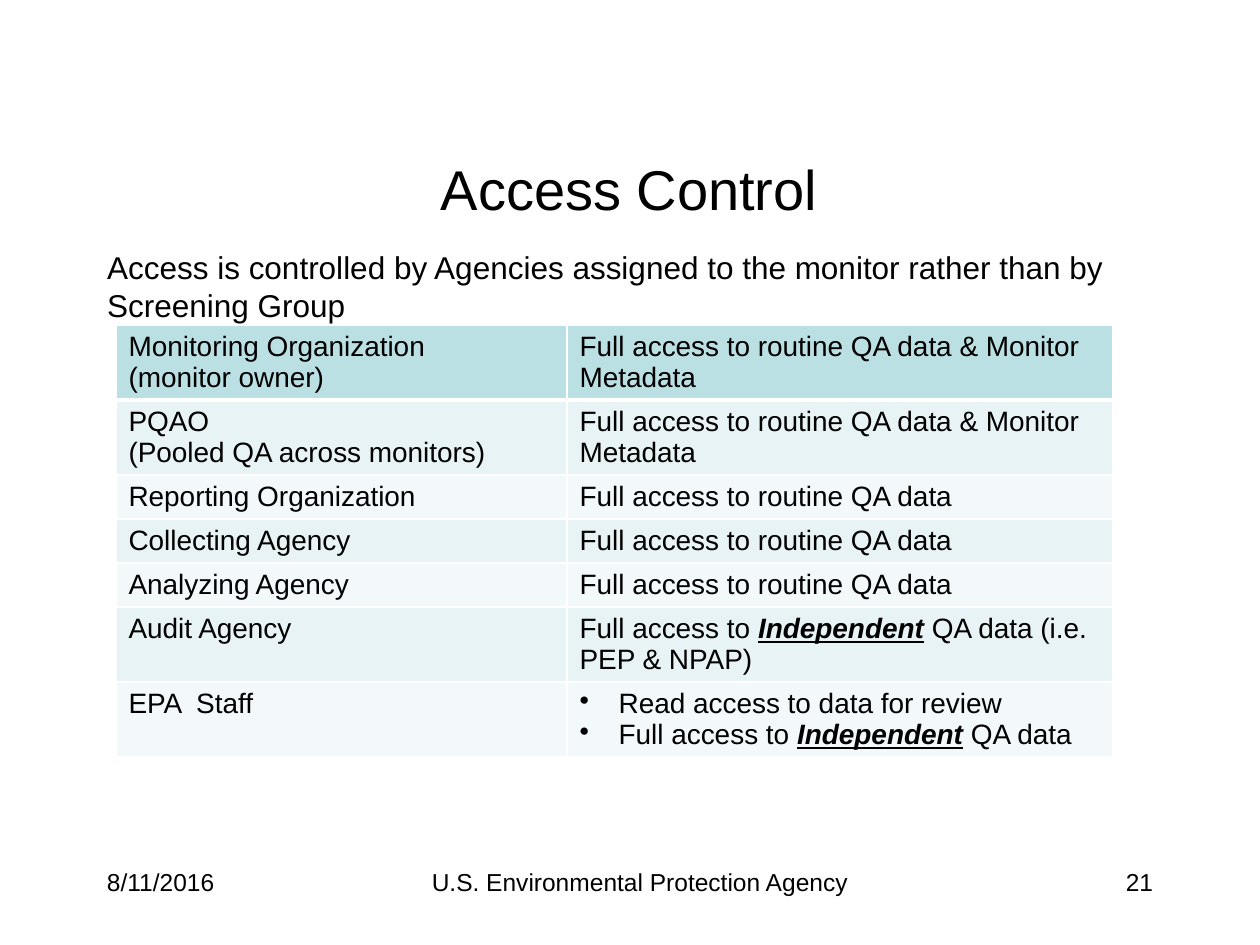
"""Build the Access Control slide with its table of agency permissions."""
import dataclasses

import lxml.etree
import pptx
import pptx.dml.color
import pptx.enum.text
import pptx.oxml.ns
import pptx.util

Inches = pptx.util.Inches
Align = pptx.enum.text.PP_ALIGN
Anchor = pptx.enum.text.MSO_ANCHOR
COLORS = {
    "text": "000000",
    "border": "FFFFFF",
    "header": "BBE0E3",
    "odd": "E7F3F4",
    "even": "F3F9FA",
}
FONT_NAME = "Arial"
EMPHASIZED = "Independent"
ROUTINE_ACCESS = "Full access to routine QA data"
METADATA_ACCESS = f"{ROUTINE_ACCESS} & Monitor Metadata"


@dataclasses.dataclass(frozen=True)
class AccessRule:
    agency: tuple[str, ...]
    access: tuple[str, ...]
    height: float = 0.59
    bulleted: bool = False


@dataclasses.dataclass(frozen=True)
class FooterItem:
    text: str
    left: float
    width: float
    alignment: Align


ACCESS_RULES = (
    AccessRule(("Monitoring Organization", "(monitor owner)"), (METADATA_ACCESS,)),
    AccessRule(("PQAO", "(Pooled QA across monitors)"), (METADATA_ACCESS,)),
    AccessRule(("Reporting Organization",), (ROUTINE_ACCESS,), 0.35),
    AccessRule(("Collecting Agency",), (ROUTINE_ACCESS,), 0.35),
    AccessRule(("Analyzing Agency",), (ROUTINE_ACCESS,), 0.35),
    AccessRule(("Audit Agency",), ("Full access to Independent QA data (i.e. PEP & NPAP)",)),
    AccessRule(
        ("EPA  Staff",),
        ("Read access to data for review", "Full access to Independent QA data"),
        bulleted=True,
    ),
)
FOOTER_ITEMS = (
    FooterItem("8/11/2016", 0.75, 2.08, Align.LEFT),
    FooterItem("U.S. Environmental Protection Agency", 2.08, 6, Align.CENTER),
    FooterItem("21", 7.17, 2.08, Align.RIGHT),
)


def rgb(name: str) -> pptx.dml.color.RGBColor:
    return pptx.dml.color.RGBColor.from_string(COLORS[name])


def format_font(font, size: float) -> None:
    font.name = FONT_NAME
    font.size = pptx.util.Pt(size)
    font.color.rgb = rgb("text")
    font.bold = False


def place(shape, left: float, top: float, width: float, height: float) -> None:
    shape.left, shape.top = Inches(left), Inches(top)
    shape.width, shape.height = Inches(width), Inches(height)


def fill_text(shape, text: str, size: float, alignment: Align, anchor: Anchor) -> None:
    frame = shape.text_frame
    frame.text = text
    frame.word_wrap = True
    frame.auto_size = pptx.enum.text.MSO_AUTO_SIZE.NONE
    frame.vertical_anchor = anchor
    paragraph = frame.paragraphs[0]
    paragraph.alignment = alignment
    paragraph.space_before = pptx.util.Pt(0)
    format_font(paragraph.runs[0].font, size)


def set_bullet(paragraph, character: str = "", indent: float = 0) -> None:
    properties = paragraph._p.get_or_add_pPr()
    properties.set("marL", str(Inches(indent)))
    properties.set("indent", str(-Inches(indent)))
    tag = "a:buChar" if character else "a:buNone"
    bullet = lxml.etree.SubElement(properties, pptx.oxml.ns.qn(tag))
    if character:
        bullet.set("char", character)


def set_borders(cell, bottom_width: float) -> None:
    properties = cell._tc.get_or_add_tcPr()
    widths = {"lnL": 1, "lnR": 1, "lnT": 1, "lnB": bottom_width}
    for side, width in widths.items():
        line = lxml.etree.SubElement(properties, pptx.oxml.ns.qn(f"a:{side}"))
        line.set("w", str(pptx.util.Pt(width)))
        fill = lxml.etree.SubElement(line, pptx.oxml.ns.qn("a:solidFill"))
        color = lxml.etree.SubElement(fill, pptx.oxml.ns.qn("a:srgbClr"))
        color.set("val", COLORS["border"])


def add_emphasized_runs(paragraph, text: str) -> None:
    before, emphasized, after = text.partition(EMPHASIZED)
    for part in filter(None, (before, emphasized, after)):
        run = paragraph.add_run()
        run.text = part
        format_font(run.font, 16)
        if part == EMPHASIZED:
            run.font.bold = run.font.italic = run.font.underline = True


def fill_cell(cell, lines: tuple[str, ...], row_index: int, bulleted: bool = False) -> None:
    set_borders(cell, 3 if row_index == 0 else 1)
    cell.fill.solid()
    band = "odd" if row_index % 2 else "even"
    cell.fill.fore_color.rgb = rgb(band if row_index else "header")
    frame = cell.text_frame
    for index, line in enumerate(lines):
        paragraph = frame.add_paragraph() if index else frame.paragraphs[0]
        if bulleted:
            set_bullet(paragraph, "•", 0.31)
        add_emphasized_runs(paragraph, line)


def add_access_table(slide) -> None:
    total_height = sum(rule.height for rule in ACCESS_RULES)
    table = slide.shapes.add_table(
        len(ACCESS_RULES), 2, Inches(0.92), Inches(2.58), Inches(7.91), Inches(total_height)
    ).table
    for column, width in zip(table.columns, (3.58, 4.33)):
        column.width = Inches(width)
    for index, rule in enumerate(ACCESS_RULES):
        table.rows[index].height = Inches(rule.height)
        fill_cell(table.cell(index, 0), rule.agency, index)
        fill_cell(table.cell(index, 1), rule.access, index, rule.bulleted)


def add_footer(slide, item: FooterItem) -> None:
    box = slide.shapes.add_textbox(
        Inches(item.left), Inches(6.83), Inches(item.width), Inches(0.5)
    )
    fill_text(box, item.text, 14, item.alignment, Anchor.TOP)


def main() -> None:
    presentation = pptx.Presentation()
    presentation.slide_width = Inches(10)
    presentation.slide_height = Inches(7.5)
    slide = presentation.slides.add_slide(presentation.slide_layouts[1])

    title = slide.shapes.title
    place(title, 0.83, 1.08, 8.33, 0.83)
    fill_text(title, "Access Control", 32, Align.CENTER, Anchor.MIDDLE)

    body = slide.placeholders[1]
    place(body, 0.75, 1.92, 8.5, 4.5)
    summary = (
        "Access is controlled by Agencies assigned to the monitor "
        "rather than by Screening Group"
    )
    fill_text(body, summary, 18, Align.LEFT, Anchor.TOP)
    set_bullet(body.text_frame.paragraphs[0])

    for item in FOOTER_ITEMS:
        add_footer(slide, item)
    add_access_table(slide)
    presentation.save("out.pptx")


if __name__ == "__main__":
    main()
